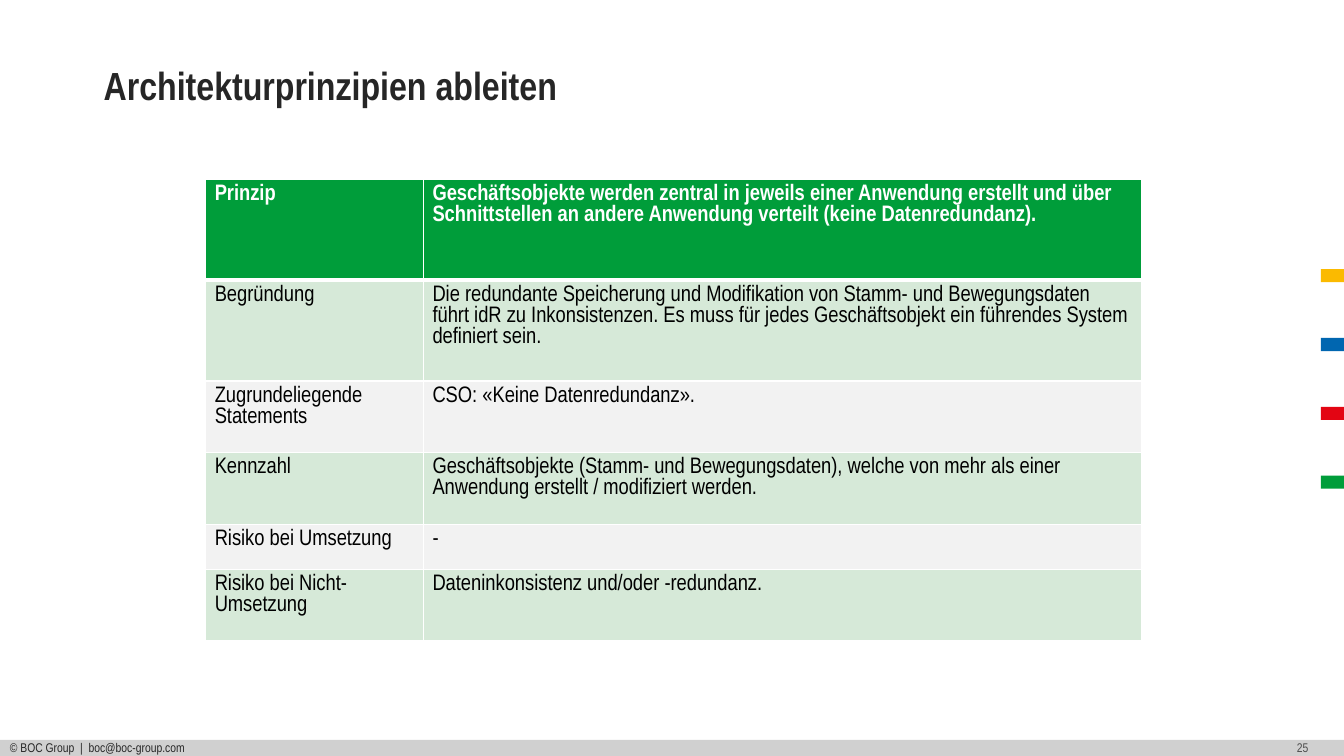
from lxml.etree import SubElement
from pptx import Presentation
from pptx.dml.color import RGBColor
from pptx.enum.shapes import MSO_SHAPE
from pptx.enum.text import MSO_ANCHOR, PP_ALIGN
from pptx.oxml.ns import qn
from pptx.util import Inches, Pt

WHITE = RGBColor(0xFF, 0xFF, 0xFF)
BLACK = RGBColor(0, 0, 0)
DARK = RGBColor(0x26, 0x26, 0x26)
GRAY = RGBColor(0x4D, 0x4D, 0x4D)
FOOTER_GRAY = RGBColor(0xD0, 0xD0, 0xD0)
LIGHT_GRAY = RGBColor(0xF2, 0xF2, 0xF2)
LIGHT_GREEN = RGBColor(0xD6, 0xE9, 0xD8)
YELLOW = RGBColor(0xFB, 0xBA, 0x00)
BLUE = RGBColor(0x00, 0x66, 0xB0)
RED = RGBColor(0xE3, 0x05, 0x13)
GREEN = RGBColor(0x00, 0x9D, 0x3A)


def write(text_frame, text, size=16, color=BLACK, bold=False, align=PP_ALIGN.LEFT, spacing=None):
    text_frame.word_wrap = True
    paragraph = text_frame.paragraphs[0]
    paragraph.text = text
    paragraph.alignment = align
    paragraph.line_spacing = spacing
    font = paragraph.runs[0].font
    font.name = "Arial Narrow"
    font.size = Pt(size)
    font.bold = bold
    font.color.rgb = color


def add_bar(left, top, width, height, color):
    shape = slide.shapes.add_shape(
        MSO_SHAPE.RECTANGLE, Inches(left), Inches(top), Inches(width), Inches(height))
    shape.shadow.inherit = False
    shape.fill.solid()
    shape.fill.fore_color.rgb = color
    shape.line.fill.background()
    return shape


presentation = Presentation()
presentation.slide_width = Inches(13.33)
presentation.slide_height = Inches(7.5)
slide = presentation.slides.add_slide(presentation.slide_layouts[6])

footer = add_bar(0, 7.34, 13.33, 0.16, FOOTER_GRAY).text_frame
footer.margin_top = footer.margin_bottom = 0
footer.vertical_anchor = MSO_ANCHOR.MIDDLE
write(footer, "© BOC Group  |  boc@boc-group.com", size=9, color=DARK)

for index, color in enumerate([YELLOW, BLUE, RED, GREEN]):
    add_bar(13.1, 2.67 + index * 0.683, 0.23, 0.13, color)

page_number = slide.shapes.add_textbox(
    Inches(12.46), Inches(7.32), Inches(0.92), Inches(0.2)).text_frame
page_number.margin_top = page_number.margin_bottom = 0
page_number.vertical_anchor = MSO_ANCHOR.MIDDLE
write(page_number, "25", size=9, color=GRAY, align=PP_ALIGN.CENTER)

title = slide.shapes.add_textbox(
    Inches(0.93), Inches(0.6), Inches(11.51), Inches(0.48)).text_frame
title.margin_bottom = 0
title.vertical_anchor = MSO_ANCHOR.BOTTOM
write(title, "Architekturprinzipien ableiten", size=28, color=DARK, bold=True, spacing=0.9)

rows = [
    (1, "Prinzip", "Geschäftsobjekte werden zentral in jeweils einer Anwendung erstellt und über "
     "Schnittstellen an andere Anwendung verteilt (keine Datenredundanz)."),
    (1, "Begründung", "Die redundante Speicherung und Modifikation von Stamm- und Bewegungsdaten "
     "führt idR zu Inkonsistenzen. Es muss für jedes Geschäftsobjekt ein führendes System "
     "definiert sein."),
    (0.71, "Zugrundeliegende Statements", "CSO: «Keine Datenredundanz»."),
    (0.71, "Kennzahl", "Geschäftsobjekte (Stamm- und Bewegungsdaten), welche von mehr als einer "
     "Anwendung erstellt / modifiziert werden."),
    (0.45, "Risiko bei Umsetzung", "-"),
    (0.71, "Risiko bei Nicht-Umsetzung", "Dateninkonsistenz und/oder -redundanz."),
]
table = slide.shapes.add_table(
    len(rows), 2, Inches(2.04), Inches(1.78), Inches(9.28), Inches(4.57)).table
table.columns[0].width = Inches(2.16)
table.columns[1].width = Inches(7.12)

for row_index, (height, *texts) in enumerate(rows):
    table.rows[row_index].height = Inches(height)
    is_header = row_index == 0
    fill_color = GREEN if is_header else LIGHT_GREEN if row_index % 2 else LIGHT_GRAY
    border_widths = {
        "a:lnL": 1,
        "a:lnR": 1,
        "a:lnT": 3 if row_index == 1 else 1,
        "a:lnB": 3 if is_header else 1,
    }
    for column_index, text in enumerate(texts):
        cell = table.cell(row_index, column_index)
        cell.margin_left = cell.margin_right = Inches(0.09)
        cell.margin_top = cell.margin_bottom = Inches(0.05)
        write(cell.text_frame, text, color=WHITE if is_header else BLACK, bold=is_header)
        properties = cell._tc.get_or_add_tcPr()
        for tag, width in border_widths.items():
            border = SubElement(properties, qn(tag), w=str(Pt(width)))
            border_fill = SubElement(border, qn("a:solidFill"))
            SubElement(border_fill, qn("a:srgbClr"), val=str(WHITE))
        cell.fill.solid()
        cell.fill.fore_color.rgb = fill_color

presentation.save("out.pptx")
